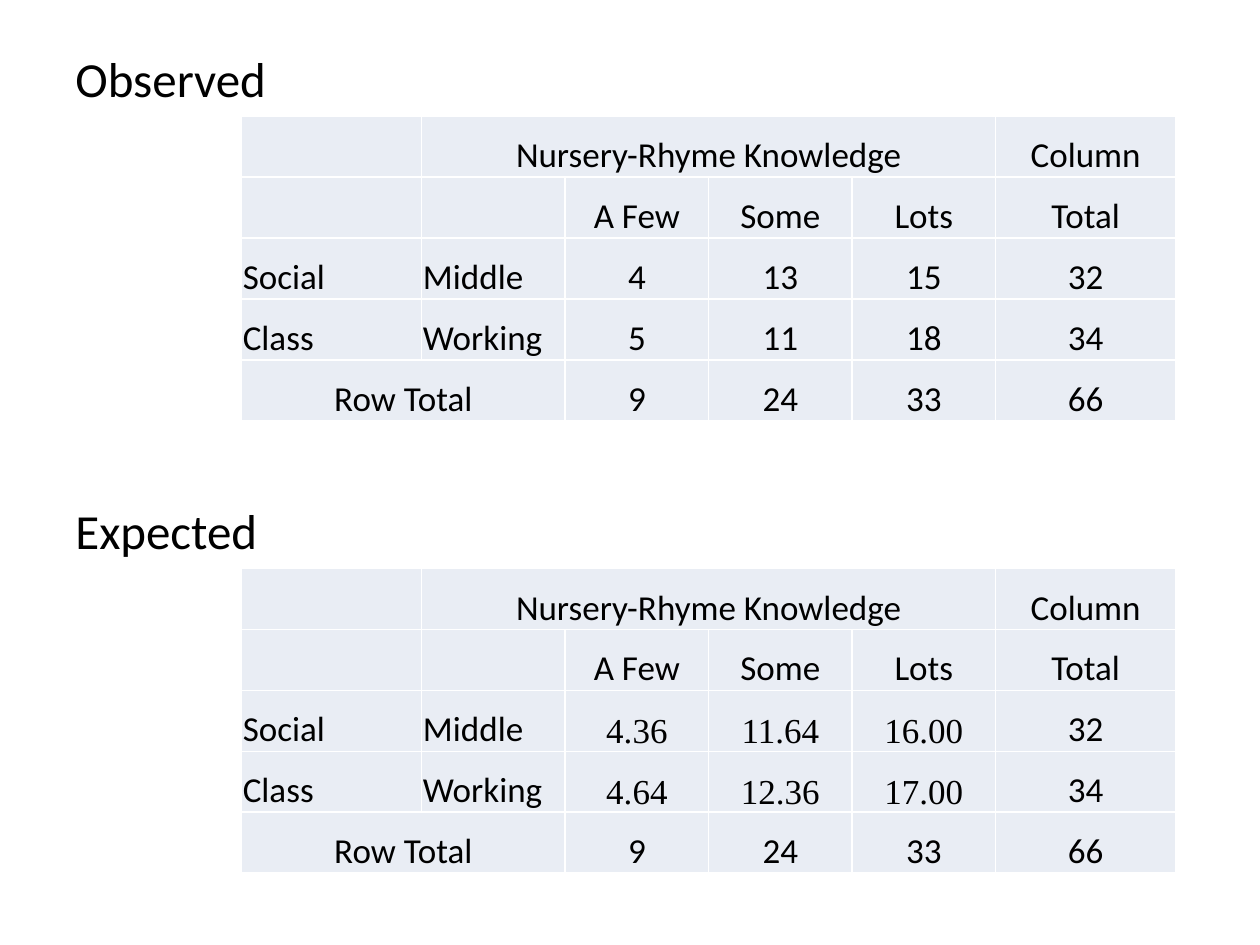
from lxml.etree import SubElement
from pptx import Presentation
from pptx.dml.color import RGBColor
from pptx.enum.text import MSO_ANCHOR, PP_ALIGN
from pptx.oxml.ns import qn
from pptx.util import Pt


def color(code):
    return RGBColor.from_string(code)


class Deck:
    font = "Calibri"
    serif = "Times New Roman"
    ink = "000000"
    tint = "E9EDF4"
    rule = "FFFFFF"

    def __init__(self, wide, high):
        self.file = Presentation()
        self.file.slide_width = Pt(wide)
        self.file.slide_height = Pt(high)
        self.slide = self.file.slides.add_slide(self.file.slide_layouts[6])

    def style(self, para, size, font):
        para.font.size = Pt(size)
        para.font.name = font
        para.font.color.rgb = color(self.ink)

    def title(self, text, left, top, wide, high):
        box = self.slide.shapes.add_textbox(Pt(left), Pt(top), Pt(wide), Pt(high))
        box.text_frame.word_wrap = True
        para = box.text_frame.paragraphs[0]
        para.text = text
        self.style(para, 28, self.font)

    def border(self, cell):
        props = cell._tc.get_or_add_tcPr()
        for side in ("lnL", "lnR", "lnT", "lnB"):
            line = SubElement(props, qn(f"a:{side}"), w=str(Pt(1)))
            fill = SubElement(line, qn("a:solidFill"))
            SubElement(fill, qn("a:srgbClr"), val=self.rule)

    def cell(self, cell, text, align):
        self.border(cell)
        cell.fill.solid()
        cell.fill.fore_color.rgb = color(self.tint)
        cell.margin_left = cell.margin_right = cell.margin_top = Pt(0.75)
        cell.margin_bottom = 0
        cell.vertical_anchor = MSO_ANCHOR.BOTTOM
        para = cell.text_frame.paragraphs[0]
        para.text = text
        para.alignment = align
        self.style(para, 20, self.serif if "." in text else self.font)

    def table(self, rows, left, top, widths, high, spans):
        frame = self.slide.shapes.add_table(
            len(rows), len(widths), Pt(left), Pt(top),
            Pt(sum(widths)), Pt(high * len(rows)))
        table = frame.table
        table.first_row = table.horz_banding = False
        for col, wide in zip(table.columns, widths):
            col.width = Pt(wide)
        for row in table.rows:
            row.height = Pt(high)
        for y, row in enumerate(rows):
            for x, text in enumerate(row):
                label = x < 2 and y in (2, 3)
                align = PP_ALIGN.LEFT if label else PP_ALIGN.CENTER
                self.cell(table.cell(y, x), text, align)
        for y, start, end in spans:
            table.cell(y, start).merge(table.cell(y, end))


def grid(middle, working):
    return [
        ["", "Nursery-Rhyme Knowledge", "", "", "", "Column"],
        ["", "", "A Few", "Some", "Lots", "Total"],
        ["Social", "Middle", *middle, "32"],
        ["Class", "Working", *working, "34"],
        ["Row Total", "", "9", "24", "33", "66"],
    ]


def main():
    deck = Deck(720, 540)
    parts = [
        ("Observed", ["4", "13", "15"], ["5", "11", "18"]),
        ("Expected", ["4.36", "11.64", "16.00"], ["4.64", "12.36", "17.00"]),
    ]
    widths = [103, 82, 82, 82, 82, 103]
    spans = [(0, 1, 4), (4, 0, 1)]
    for i, (name, middle, working) in enumerate(parts):
        top = 24 + i * 258.5
        deck.title(name, 36, top, 624, 41)
        deck.table(grid(middle, working), 138, top + 42.5, widths, 34.8, spans)
    deck.file.save("out.pptx")


if __name__ == "__main__":
    main()
